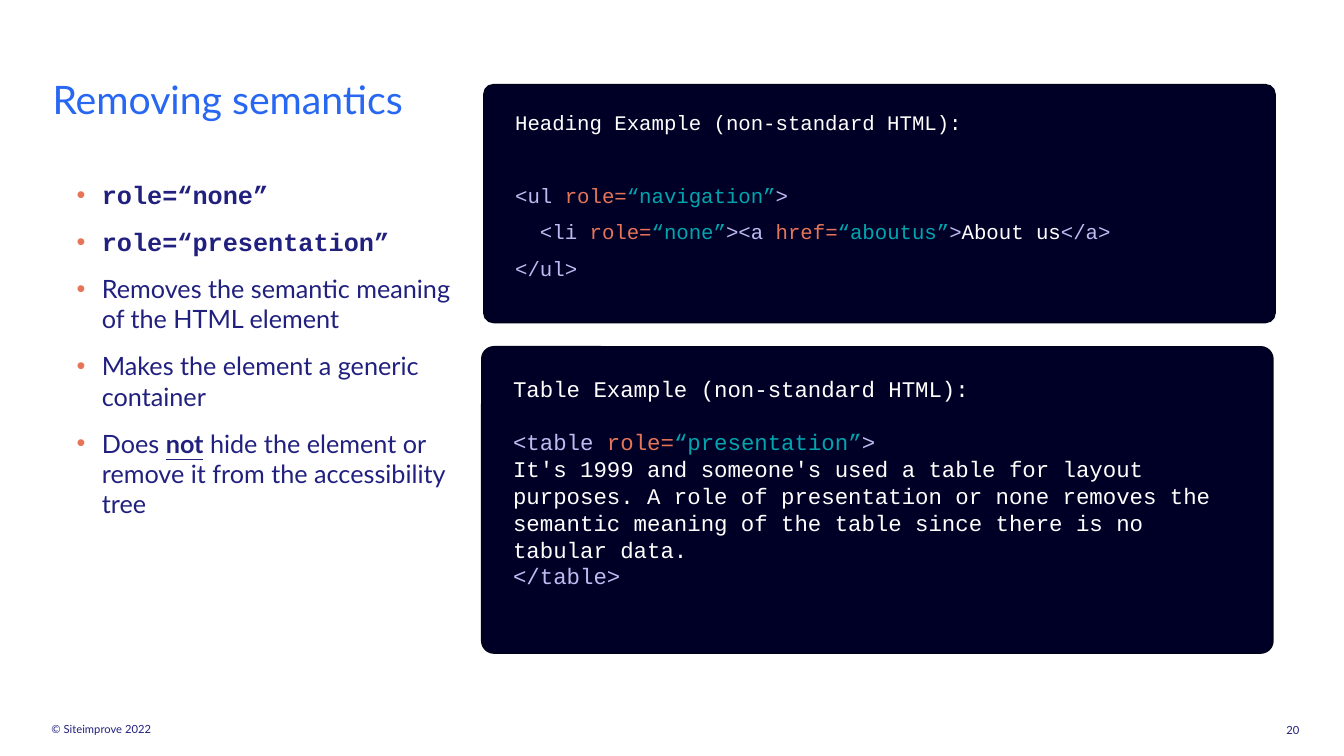
from lxml.etree import SubElement
from pptx import Presentation
from pptx.dml.color import RGBColor
from pptx.enum.shapes import MSO_SHAPE
from pptx.enum.text import MSO_ANCHOR, MSO_AUTO_SIZE, PP_ALIGN
from pptx.oxml.ns import qn
from pptx.util import Inches, Pt

WIDTH, HEIGHT = Inches(13.33), Inches(7.5)
COLUMNS, ROWS = 64, 36
NAVY, BLUE, PANEL, PANEL_EDGE = "21207F", "2767F1", "000026", "00001C"
TAG, ATTRIBUTE, VALUE, PLAIN = "BDBBF1", "E57459", "00A5AE", "FFFFFF"
SANS, MONO = "Lato", "Courier New"

HEADING_CODE = [
    [("Heading Example (non-standard HTML):", PLAIN)],
    [("<ul ", TAG), ("role=", ATTRIBUTE), ("“navigation”", VALUE), (">", TAG)],
    [("  <li ", TAG), ("role=", ATTRIBUTE), ("“none”", VALUE), ("><a ", TAG),
     ("href=", ATTRIBUTE), ("“aboutus”", VALUE), (">", TAG),
     ("About us", PLAIN), ("</a>", TAG)],
    [("</ul>", TAG)],
]
TABLE_CODE = [
    [("Table Example (non-standard HTML):", PLAIN)],
    [("<table ", TAG), ("role=", ATTRIBUTE), ("“presentation”", VALUE), (">", TAG)],
    [("It's 1999 and someone's used a table for layout purposes. "
      "A role of presentation or none removes the semantic meaning of the table "
      "since there is no tabular data.", PLAIN)],
    [("</table>", TAG)],
]
STRONG = {"bold": True}
CODE = {"font": MONO, "bold": True}
POINTS = [
    [("role=“none”", CODE)],
    [("role=“presentation”", CODE)],
    [("Removes the semantic meaning of the HTML element", {})],
    [("Makes the element a generic container", {})],
    [("Does ", {}), ("not", STRONG | {"underline": True}),
     (" hide the element or remove it from the accessibility tree", {})],
]


def colour(value):
    """Turn a hex string into a colour."""
    return RGBColor.from_string(value)


def grid(box):
    """Turn columns and rows into slide lengths."""
    left, top, width, height = box
    return (int(left * WIDTH / COLUMNS), int(top * HEIGHT / ROWS),
            int(width * WIDTH / COLUMNS), int(height * HEIGHT / ROWS))


def write(paragraph, text, font=SANS, size=18, color=NAVY, bold=False, underline=False):
    """Add one formatted run to a paragraph."""
    run = paragraph.add_run()
    run.text = text
    run.font.name, run.font.size = font, Pt(size)
    run.font.bold, run.font.underline = bold, underline
    run.font.color.rgb = colour(color)


def prepare(frame, margin=0, anchor=MSO_ANCHOR.TOP):
    """Set wrapping, margins and anchor of a text frame."""
    frame.word_wrap, frame.auto_size = True, MSO_AUTO_SIZE.NONE
    frame.vertical_anchor = anchor
    frame.margin_left = frame.margin_right = Inches(margin)
    frame.margin_top = frame.margin_bottom = Inches(margin / 2)
    return frame


def paragraphs(frame, lines):
    """Yield a paragraph for each line, starting with the existing one."""
    for index, line in enumerate(lines):
        yield index, frame.add_paragraph() if index else frame.paragraphs[0], line


def place(placeholder, box):
    """Move a placeholder to its box and return its prepared frame."""
    placeholder.left, placeholder.top, placeholder.width, placeholder.height = grid(box)
    return prepare(placeholder.text_frame)


def add_title(slide, box):
    """Fill the title placeholder."""
    heading = place(slide.shapes.title, box).paragraphs[0]
    heading.alignment, heading.line_spacing = PP_ALIGN.LEFT, 0.9
    write(heading, "Removing semantics", size=28, color=BLUE)


def add_bullet(paragraph):
    """Give a paragraph a coloured hanging bullet."""
    properties = paragraph._p.get_or_add_pPr()
    properties.set("marL", str(Inches(0.25)))
    properties.set("indent", str(Inches(-0.25)))
    bullet_colour = SubElement(properties, qn("a:buClr"))
    SubElement(bullet_colour, qn("a:srgbClr"), val=ATTRIBUTE)
    SubElement(properties, qn("a:buFont"), typeface="Arial")
    SubElement(properties, qn("a:buChar"), char="•")


def add_points(slide, box):
    """Fill the body placeholder with the bulleted points."""
    frame = place(slide.placeholders[1], box)
    for index, paragraph, point in paragraphs(frame, POINTS):
        add_bullet(paragraph)
        paragraph.space_before = Pt(12 if index else 0)
        for text, style in point:
            write(paragraph, text, **style)


def add_code_panel(slide, box, code, size, gap, intro_gap, spacing):
    """Draw a dark rounded panel with coloured code inside."""
    panel = slide.shapes.add_shape(MSO_SHAPE.ROUNDED_RECTANGLE, *grid(box))
    panel.adjustments[0] = 0.04
    panel.shadow.inherit = False
    panel.fill.solid()
    panel.fill.fore_color.rgb = colour(PANEL)
    panel.line.color.rgb = colour(PANEL_EDGE)
    panel.line.width = Pt(1)
    left, top, width, height = box
    inner = (left + 1.02, top + 1.1, width - 2.04, height - 2.2)
    frame = prepare(slide.shapes.add_textbox(*grid(inner)).text_frame, margin=0.1)
    for index, paragraph, line in paragraphs(frame, code):
        paragraph.line_spacing = spacing
        paragraph.space_before = Pt((0, intro_gap)[index] if index < 2 else gap)
        for text, color in line:
            write(paragraph, text, font=MONO, size=size, color=color)


def add_footer(slide, box, text, align):
    """Add a small line of footer text."""
    frame = prepare(slide.shapes.add_textbox(*grid(box)).text_frame,
                    anchor=MSO_ANCHOR.MIDDLE)
    frame.paragraphs[0].alignment = align
    write(frame.paragraphs[0], text, size=8)


def main():
    """Build the slide and save it."""
    deck = Presentation()
    deck.slide_width, deck.slide_height = WIDTH, HEIGHT
    slide = deck.slides.add_slide(deck.slide_layouts[1])
    add_title(slide, (2.5, 3.84, 34.42, 2.06))
    add_points(slide, (3.65, 8.54, 18.14, 24.86))
    add_code_panel(slide, (23.04, 4.03, 37.68, 11.33), HEADING_CODE,
                   size=14.8, gap=10, intro_gap=36, spacing=0.9)
    add_code_panel(slide, (22.94, 16.51, 37.68, 14.59), TABLE_CODE,
                   size=16, gap=0, intro_gap=19, spacing=1.0)
    add_footer(slide, (2.45, 34.08, 17.42, 1.3), "© Siteimprove 2022", PP_ALIGN.LEFT)
    add_footer(slide, (60.34, 33.46, 2.45, 2.59), "20", PP_ALIGN.CENTER)
    deck.save("out.pptx")


if __name__ == "__main__":
    main()
